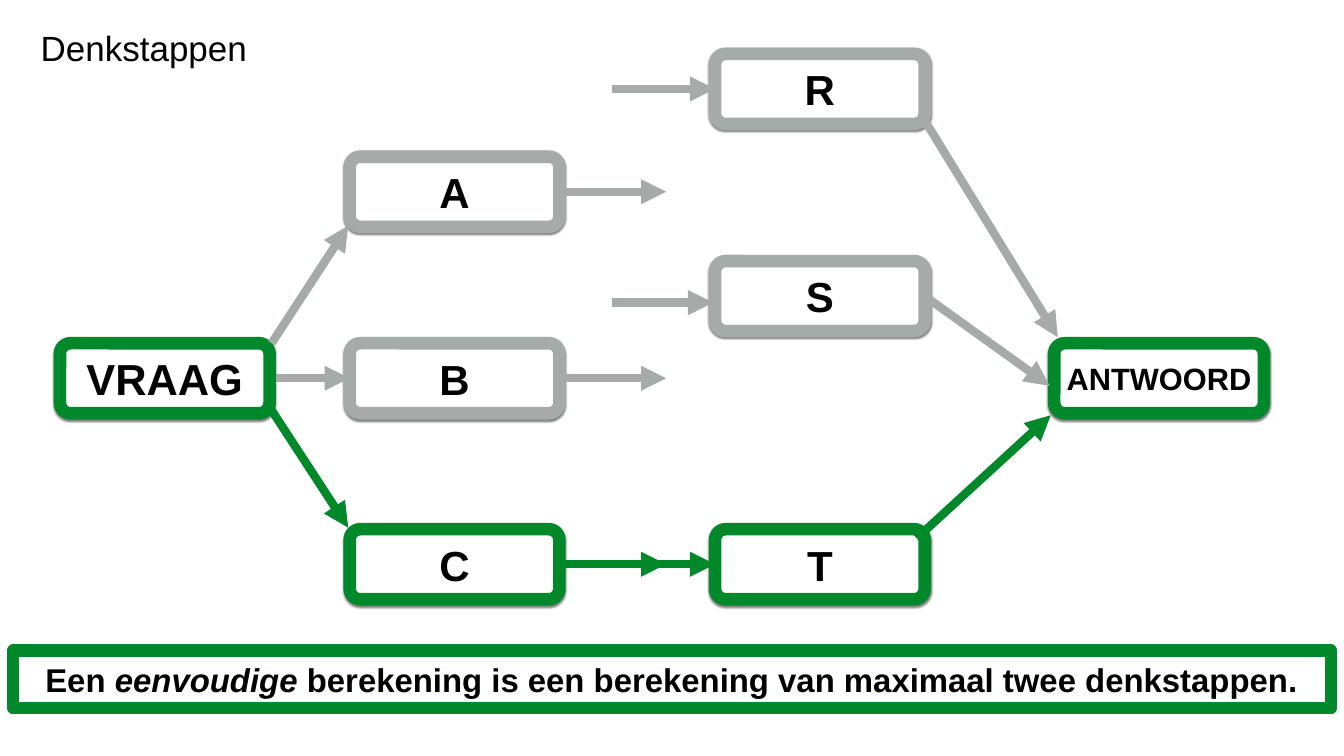
from lxml import etree
from pptx import Presentation
from pptx import util as u
from pptx.dml.color import RGBColor
from pptx.enum import shapes, text
from pptx.oxml.ns import qn

THEME = {
    "font": "Arial", "ink": "000000", "paper": "FFFFFF",
    "route": "00882B", "other": "A6AAA9",
    "title": 50, "step": 60, "question": 62, "answer": 44, "conclusion": 47,
    "border": 18, "arrow": 12,
}

# Content
TITLE = "Denkstappen"
CONCLUSION = [("Een ", False), ("eenvoudige", True),
              (" berekening is een berekening van maximaal twee denkstappen.", False)]

# Grid: left edges of columns, top edges of rows, one box size (inches)
COLUMNS = [1.19, 6.94, 14.19, 20.92]
ROWS = [1.07, 3.11, 5.18, 6.81, 10.5]
BOX_W, BOX_H = 4.16, 1.39

# label: (column, row, colour, type size)
STEPS = {
    "VRAAG": (0, 3, "route", "question"),
    "ANTWOORD": (3, 3, "route", "answer"),
    "A": (1, 1, "other", "step"),
    "B": (1, 3, "other", "step"),
    "C": (1, 4, "route", "step"),
    "S": (2, 2, "other", "step"),
    "R": (2, 0, "other", "step"),
    "T": (2, 4, "route", "step"),
}

# An arrow end: (step, place on the box, gap right, gap down); no gap means joined
PLACES = {"left": (0, 0.5), "right": (1, 0.5), "top left": (0, 0),
          "top right": (1, 0), "bottom left": (0, 1), "bottom right": (1, 1)}
SITES = {"left": 1, "right": 3}
STUB = 2.12
ARROWS = [
    (("VRAAG", "top right", 0.04, 0), ("A", "bottom left", -0.03, -0.02), "other"),
    (("VRAAG", "bottom right", 0.04, -0.06), ("C", "top left", -0.03, -0.03), "route"),
    (("VRAAG", "right", 0.13, 0), ("B", "left", 0, 0), "other"),
    (("R", "bottom right", 0, -0.07), ("ANTWOORD", "top left", 0.07, -0.12), "other"),
    (("T", "top right", -0.16, 0.18), ("ANTWOORD", "bottom left", -0.07, 0.04), "route"),
    (("S", "right", 0, 0), ("ANTWOORD", "left", -0.09, 0.15), "other"),
    (("R", "left", -2.05, 0), ("R", "left", 0, 0), "other"),
    (("B", "right", 0, 0), ("B", "right", STUB, 0), "other"),
    (("A", "right", 0, 0), ("A", "right", STUB, 0), "other"),
    (("T", "left", -2.05, 0), ("T", "left", 0, 0), "route"),
    (("S", "left", -2.04, 0.13), ("S", "left", -0.04, 0.13), "other"),
    (("C", "right", 0, 0), ("C", "right", STUB, 0), "route"),
]


def colour(key):
    return RGBColor.from_string(THEME[key])


def write(shape, runs, size, bold=True, wrap=True):
    frame = shape.text_frame
    frame.word_wrap = wrap
    frame.vertical_anchor = text.MSO_ANCHOR.MIDDLE
    frame.margin_left = frame.margin_right = frame.margin_top = frame.margin_bottom = 0
    paragraph = frame.paragraphs[0]
    paragraph.alignment = text.PP_ALIGN.CENTER
    font = paragraph.font
    font.name, font.size, font.bold = THEME["font"], u.Pt(THEME[size]), bold
    font.color.rgb = colour("ink")
    for words, italic in runs:
        run = paragraph.add_run()
        run.text = words
        if italic:
            run.font.italic = True
    return paragraph


def add_box(slide, preset, place, border, fill=True):
    box = slide.shapes.add_shape(preset, *map(u.Inches, place))
    box.shadow.inherit = False
    if fill:
        box.fill.solid()
        box.fill.fore_color.rgb = colour("paper")
    else:
        box.fill.background()
    box.line.color.rgb = colour(border)
    box.line.width = u.Pt(THEME["border"])
    return box


def add_shadow(box):
    effects = box._element.spPr.find(qn("a:effectLst"))
    shadow = etree.SubElement(effects, qn("a:outerShdw"), blurRad=str(u.Pt(3)),
                              dist=str(u.Pt(2)), dir="5400000", rotWithShape="0")
    ink = etree.SubElement(shadow, qn("a:srgbClr"), val=THEME["ink"])
    etree.SubElement(ink, qn("a:alpha"), val="50000")


def locate(step, place, right, down):
    column, row = STEPS[step][:2]
    across, along = PLACES[place]
    return (u.Inches(COLUMNS[column] + across * BOX_W + right),
            u.Inches(ROWS[row] + along * BOX_H + down))


def add_arrow(slide, boxes, start, end, key):
    arrow = slide.shapes.add_connector(shapes.MSO_CONNECTOR.STRAIGHT,
                                       *locate(*start), *locate(*end))
    for (step, place, right, down), join in ((start, arrow.begin_connect),
                                             (end, arrow.end_connect)):
        if place in SITES and not (right or down):
            join(boxes[step], SITES[place])
    arrow.line.color.rgb = colour(key)
    arrow.line.width = u.Pt(THEME["arrow"])
    etree.SubElement(arrow.line._get_or_add_ln(), qn("a:tailEnd"), type="triangle")
    etree.SubElement(arrow._element.spPr, qn("a:effectLst"))


def main():
    deck = Presentation()
    deck.slide_width, deck.slide_height = u.Inches(26.67), u.Inches(15)
    slide = deck.slides.add_slide(deck.slide_layouts[6])

    # Title
    title = slide.shapes.add_textbox(*map(u.Inches, (0.71, 0.47, 4.29, 0.94)))
    write(title, [(TITLE, False)], "title", bold=False, wrap=False)

    # Steps
    boxes = {}
    for label, (column, row, border, size) in STEPS.items():
        box = add_box(slide, shapes.MSO_SHAPE.ROUNDED_RECTANGLE,
                      (COLUMNS[column], ROWS[row], BOX_W, BOX_H), border)
        box.adjustments[0] = 0.15
        add_shadow(box)
        write(box, [(label, False)], size)
        boxes[label] = box

    # Arrows
    for start, end, key in ARROWS:
        add_arrow(slide, boxes, start, end, key)

    # Conclusion
    banner = add_box(slide, shapes.MSO_SHAPE.RECTANGLE,
                     (0.26, 12.91, 26.15, 1.14), "route", fill=False)
    write(banner, CONCLUSION, "conclusion").space_before = u.Pt(10)

    deck.save("out.pptx")


if __name__ == "__main__":
    main()
